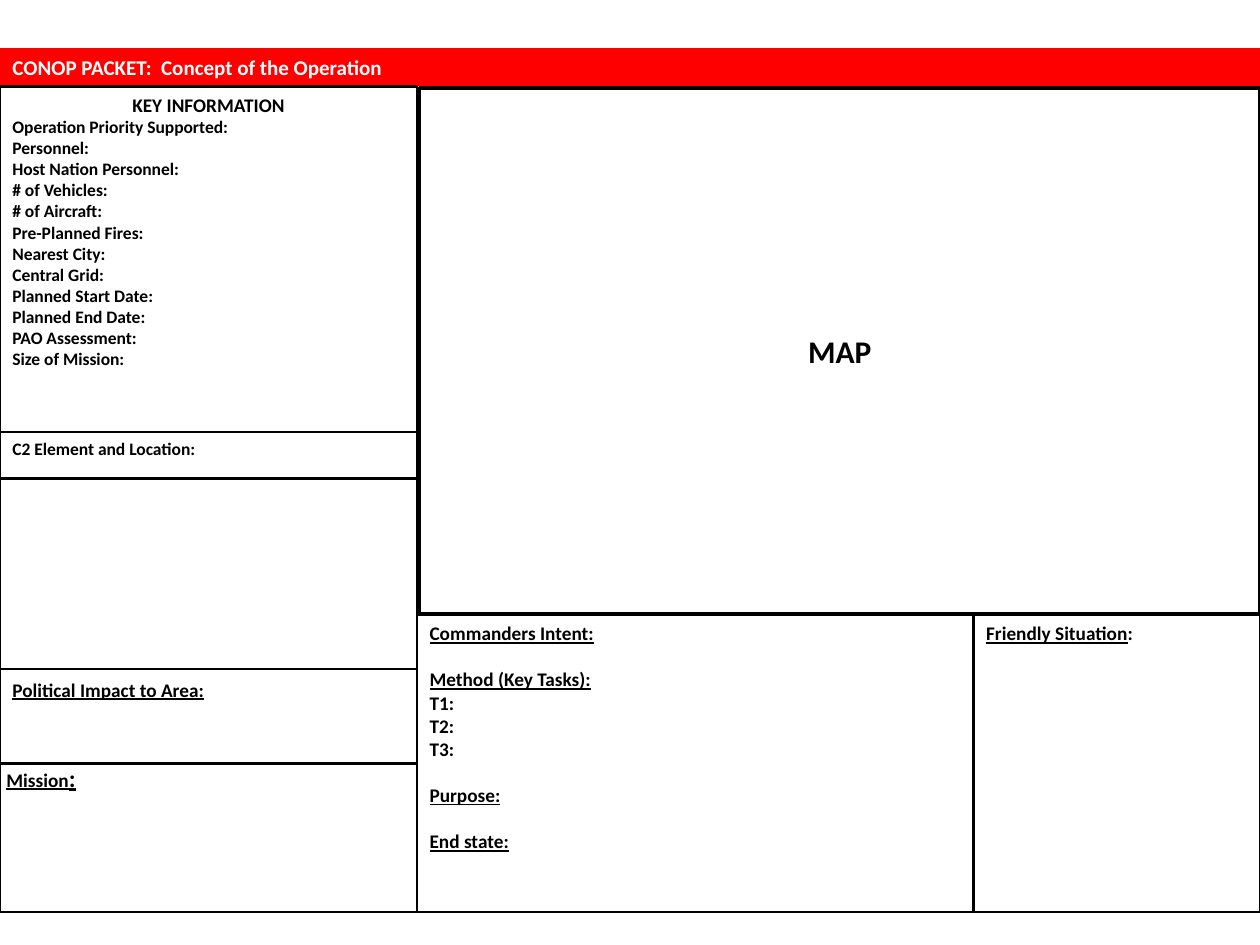
from pptx import Presentation
from pptx.dml.color import RGBColor
from pptx.enum.shapes import MSO_SHAPE
from pptx.enum.text import MSO_ANCHOR, MSO_AUTO_SIZE, PP_ALIGN
from pptx.util import Cm, Pt

THEME = {
    "font": "Calibri",
    "ink": RGBColor(0, 0, 0),
    "paper": RGBColor(255, 255, 255),
    "banner": RGBColor(255, 0, 0),
    "line": Pt(1.5),
    "map_line": Pt(2),
    "styles": {
        "banner": {"size": Pt(12), "bold": True},
        "label": {"size": Pt(10), "bold": True},
        "heading": {"size": Pt(11), "bold": True},
        "underlined": {"size": Pt(11), "bold": True, "underline": True},
        "large_mark": {"size": Pt(14), "bold": True, "underline": True},
        "map": {"size": Pt(18), "bold": True},
    },
}
CENTERED = {"alignment": PP_ALIGN.CENTER}
NEW_BLOCK = {"space_before": Pt(13.2)}

# Content: each paragraph is (spans, paragraph format), each span (text, style)
BANNER = [([("CONOP PACKET:  Concept of the Operation", "banner")],
           {"alignment": PP_ALIGN.LEFT})]
KEY_FIELDS = [
    "Operation Priority Supported:", "Personnel:", "Host Nation Personnel:",
    "# of Vehicles:", "# of Aircraft:", "Pre-Planned Fires:", "Nearest City:",
    "Central Grid:", "Planned Start Date:", "Planned End Date:",
    "PAO Assessment:", "Size of Mission:",
]
KEY_INFORMATION = [([("KEY INFORMATION", "heading")], CENTERED)] + [
    ([(field, "label")], {}) for field in KEY_FIELDS]
C2_ELEMENT = [([("C2 Element and Location:", "label")], {})]
POLITICAL_IMPACT = [([("Political Impact to Area:", "underlined")],
                     {"line_spacing": 1.1})]
MISSION = [([("Mission", "underlined"), (":", "large_mark")],
            {"line_spacing": 0.9})]
INTENT = [
    ([("Commanders Intent:", "underlined")], {}),
    ([("Method (Key Tasks):", "underlined")], NEW_BLOCK),
    *[([(task, "heading")], {}) for task in ("T1:", "T2:", "T3:")],
    ([("Purpose:", "underlined")], NEW_BLOCK),
    ([("End state:", "underlined")], NEW_BLOCK),
]
FRIENDLY = [([("Friendly Situation", "underlined"), (":", "heading")], {})]
MAP = [([("MAP", "map")], CENTERED)]

# Grid in cm
WIDTH, HEIGHT = 25.4, 19.05
LEFT_EDGE, INTENT_EDGE, FRIENDLY_EDGE = 0, 8.41, 19.63
BOTTOM = 18.39
LOWER_TOP = 12.4
MAP_LEFT, MAP_TOP = 8.46, 1.78
BANNER_TOP, BANNER_HEIGHT = 0.97, 0.76
LEFT_COLUMN = [  # top edge, content
    (1.75, KEY_INFORMATION),
    (8.71, C2_ELEMENT),
    (9.65, []),
    (13.49, POLITICAL_IMPACT),
    (15.39, MISSION),
]
LOWER_ROW = [  # left edge, content
    (INTENT_EDGE, INTENT),
    (FRIENDLY_EDGE, FRIENDLY),
]
DEFAULT_FRAME = {
    "word_wrap": True, "vertical_anchor": MSO_ANCHOR.TOP,
    "margin_left": Cm(0.25), "margin_right": Cm(0.25),
    "margin_top": Cm(0.13), "margin_bottom": Cm(0.13),
}
TIGHT_FRAME = {
    "margin_left": Cm(0.13), "margin_right": Cm(0.13),
    "margin_top": Cm(0.05), "margin_bottom": Cm(0.05),
}
MIDDLE_FRAME = {"vertical_anchor": MSO_ANCHOR.MIDDLE}


def apply(target, values):
    for name, value in values.items():
        setattr(target, name, value)


def write(frame, paragraphs, color, frame_format):
    apply(frame, {**DEFAULT_FRAME, **frame_format})
    for index, (spans, paragraph_format) in enumerate(paragraphs):
        paragraph = frame.add_paragraph() if index else frame.paragraphs[0]
        apply(paragraph, {"alignment": PP_ALIGN.LEFT, **paragraph_format})
        for text, style in spans:
            run = paragraph.add_run()
            run.text = text
            apply(run.font, {"name": THEME["font"], **THEME["styles"][style]})
            run.font.color.rgb = color


def add_panel(slide, left, top, right, bottom, paragraphs,
              frame_format, line_width=THEME["line"]):
    panel = slide.shapes.add_shape(
        MSO_SHAPE.RECTANGLE, Cm(left), Cm(top), Cm(right - left), Cm(bottom - top))
    panel.shadow.inherit = False
    panel.fill.solid()
    panel.fill.fore_color.rgb = THEME["paper"]
    panel.line.color.rgb = THEME["ink"]
    panel.line.width = line_width
    write(panel.text_frame, paragraphs, THEME["ink"], frame_format)


def main():
    deck = Presentation()
    apply(deck, {"slide_width": Cm(WIDTH), "slide_height": Cm(HEIGHT)})
    slide = deck.slides.add_slide(deck.slide_layouts[5])

    # Title banner
    banner = slide.shapes.title
    apply(banner, {"left": Cm(0), "top": Cm(BANNER_TOP),
                   "width": Cm(WIDTH), "height": Cm(BANNER_HEIGHT)})
    banner.fill.solid()
    banner.fill.fore_color.rgb = THEME["banner"]
    write(banner.text_frame, BANNER, THEME["paper"],
          {**MIDDLE_FRAME, "auto_size": MSO_AUTO_SIZE.NONE})

    # Left column: each panel ends where the next begins
    bottoms = [top for top, _ in LEFT_COLUMN[1:]] + [BOTTOM]
    for (top, content), bottom in zip(LEFT_COLUMN, bottoms):
        frame_format = TIGHT_FRAME if content is MISSION else {}
        add_panel(slide, LEFT_EDGE, top, INTENT_EDGE, bottom, content, frame_format)

    # Lower row: intent and friendly situation
    rights = [left for left, _ in LOWER_ROW[1:]] + [WIDTH]
    for (left, content), right in zip(LOWER_ROW, rights):
        add_panel(slide, left, LOWER_TOP, right, BOTTOM, content, {})

    # Map area
    add_panel(slide, MAP_LEFT, MAP_TOP, WIDTH, LOWER_TOP - 0.03, MAP,
              MIDDLE_FRAME, THEME["map_line"])

    deck.save("out.pptx")


if __name__ == "__main__":
    main()
